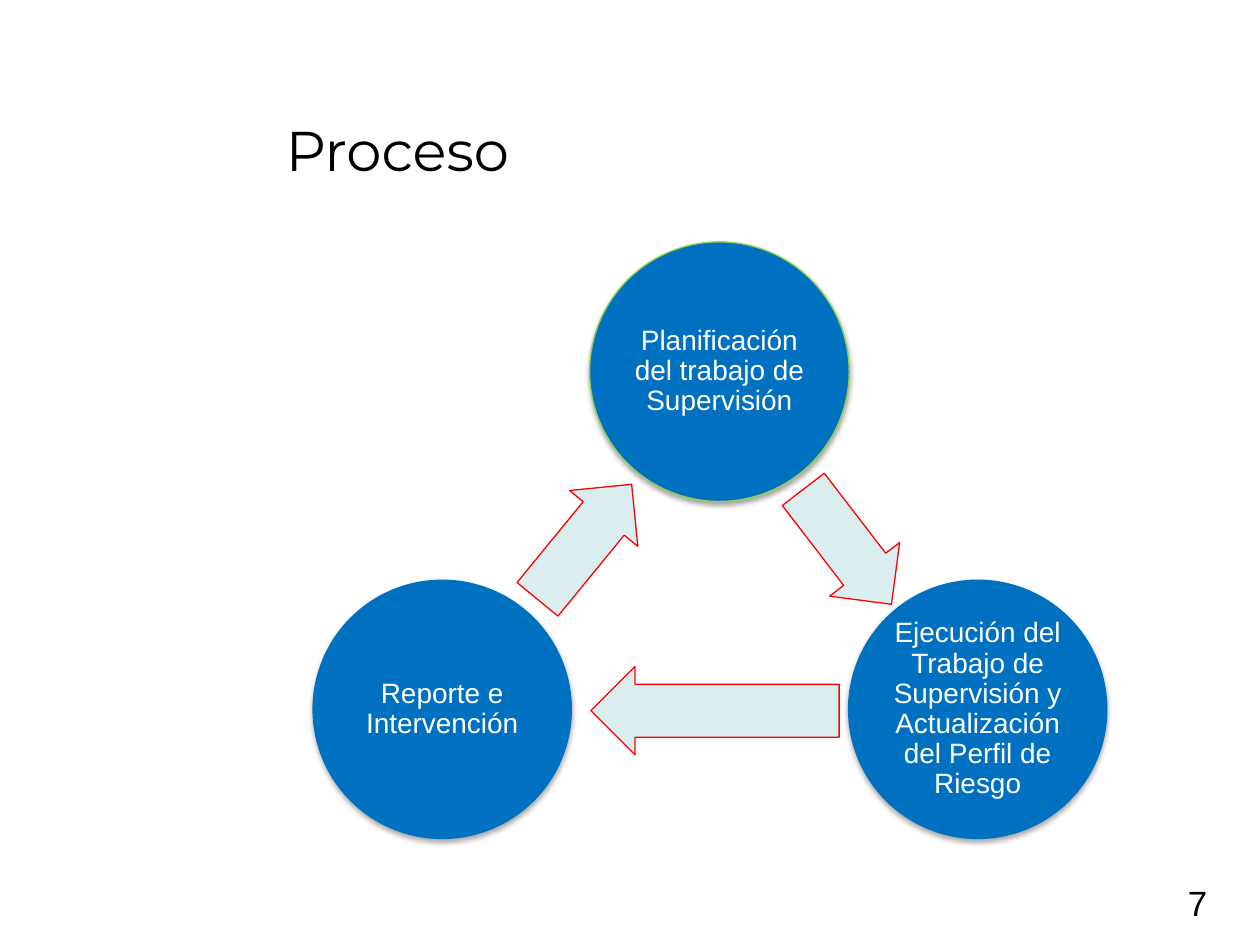
import collections
import dataclasses

import lxml.etree
import pptx
import pptx.dml.color
import pptx.enum.shapes
import pptx.enum.text
import pptx.oxml
import pptx.oxml.ns
import pptx.util

Box = collections.namedtuple("Box", "left top width height")
SHAPE = pptx.enum.shapes.MSO_SHAPE
ALIGN = pptx.enum.text.PP_ALIGN
ANCHOR = pptx.enum.text.MSO_ANCHOR
COLUMNS, ROWS = 100, 75


@dataclasses.dataclass(frozen=True)
class Theme:
    """Colours, fonts and type sizes of the slide."""
    ink: str = "000000"
    stage_fill: str = "0070C0"
    stage_text: str = "FFFFFF"
    first_outline: str = "92D050"
    arrow_fill: str = "DAEDEF"
    arrow_outline: str = "FF0000"
    title_font: str = "Montserrat"
    body_font: str = "Arial"
    title_size: int = 32
    stage_size: int = 16
    number_size: int = 20
    outline_width: float = 0.75


THEME = Theme()
STAGES = [
    (22, 0, "Planificación del trabajo de Supervisión", THEME.first_outline),
    (42.5, 26.8, "Ejecución del Trabajo de Supervisión y Actualización del Perfil de Riesgo", None),
    (0, 26.8, "Reporte e Intervención", None),
]
STAGE_DIAMETER = 20.6
ARROWS = [(36.7, 20.7, 11.5, 52.5), (22.1, 33.7, 19.7, 180), (15.7, 20.3, 11.8, 309.3)]
ARROW_HEIGHT = 7


def rgb(value):
    """Turn a hex string into a colour."""
    return pptx.dml.color.RGBColor.from_string(value)


def grid(box):
    """Convert a box in grid columns and rows to slide lengths."""
    cell = pptx.util.Inches(10) / COLUMNS
    return [round(length * cell) for length in box]


def write(frame, text, font, size, color):
    """Write one formatted paragraph and return it."""
    frame.word_wrap = True
    frame.text = text
    paragraph = frame.paragraphs[0]
    for run in paragraph.runs:
        run.font.name = font
        run.font.size = pptx.util.Pt(size)
        run.font.color.rgb = rgb(color)
    return paragraph


def paint(shape, fill, outline):
    """Set a flat fill and an optional thin outline."""
    shape.shadow.inherit = False
    shape.fill.solid()
    shape.fill.fore_color.rgb = rgb(fill)
    if outline:
        shape.line.color.rgb = rgb(outline)
        shape.line.width = pptx.util.Pt(THEME.outline_width)
    else:
        shape.line.fill.background()


def cast_shadow(shape):
    """Give a shape a soft shadow below it."""
    effects = shape.element.spPr.find(pptx.oxml.ns.qn("a:effectLst"))
    effects.append(pptx.oxml.parse_xml(
        f'<a:outerShdw {pptx.oxml.ns.nsdecls("a")} blurRad="{pptx.util.Pt(3.1)}" '
        f'dist="{pptx.util.Pt(1.8)}" dir="5400000" rotWithShape="0">'
        f'<a:srgbClr val="{THEME.ink}"><a:alpha val="35000"/></a:srgbClr></a:outerShdw>'))


def add_title(slide, box):
    """Place the title at the bottom of its box."""
    frame = slide.shapes.add_textbox(*grid(box)).text_frame
    frame.vertical_anchor = ANCHOR.BOTTOM
    write(frame, "Proceso", THEME.title_font, THEME.title_size, THEME.ink)


def add_stage(slide, box, text, outline):
    """Place one round stage of the cycle with its label."""
    stage = slide.shapes.add_shape(SHAPE.OVAL, *grid(box))
    paint(stage, THEME.stage_fill, outline)
    cast_shadow(stage)
    frame = stage.text_frame
    frame.margin_left = frame.margin_right = pptx.util.Inches(0.02)
    frame.margin_top = frame.margin_bottom = pptx.util.Inches(0.02)
    frame.vertical_anchor = ANCHOR.MIDDLE
    label = write(frame, text, THEME.body_font, THEME.stage_size, THEME.stage_text)
    label.alignment = ALIGN.CENTER
    label.line_spacing = 0.9


def add_arrow(slide, box, rotation):
    """Place one block arrow between two stages."""
    arrow = slide.shapes.add_shape(SHAPE.RIGHT_ARROW, *grid(box))
    arrow.adjustments[0], arrow.adjustments[1] = 0.6, 0.5
    arrow.rotation = rotation
    paint(arrow, THEME.arrow_fill, THEME.arrow_outline)


def add_cycle(slide, box):
    """Place the three stages and the arrows that link them."""
    for (x, y, text, outline), (arrow_x, arrow_y, length, rotation) in zip(STAGES, ARROWS):
        add_stage(slide, Box(box.left + x, box.top + y, STAGE_DIAMETER, STAGE_DIAMETER),
                  text, outline)
        add_arrow(slide, Box(box.left + arrow_x, box.top + arrow_y, length, ARROW_HEIGHT),
                  rotation)


def add_page_number(slide, box):
    """Place the page number in the corner."""
    frame = slide.shapes.add_textbox(*grid(box)).text_frame
    frame.auto_size = pptx.enum.text.MSO_AUTO_SIZE.SHAPE_TO_FIT_TEXT
    write(frame, "7", THEME.body_font, THEME.number_size, THEME.ink)


def main():
    """Build and save the slide."""
    deck = pptx.Presentation()
    deck.slide_width, deck.slide_height = grid((COLUMNS, ROWS))
    slide = deck.slides.add_slide(deck.slide_layouts[6])
    add_page_number(slide, Box(93.3, 69.5, 6.7, 4.3))
    add_title(slide, Box(21.7, 4.2, 76.7, 10.8))
    add_cycle(slide, Box(24.8, 19.2, 63.1, 47.4))
    deck.save("out.pptx")


if __name__ == "__main__":
    main()
